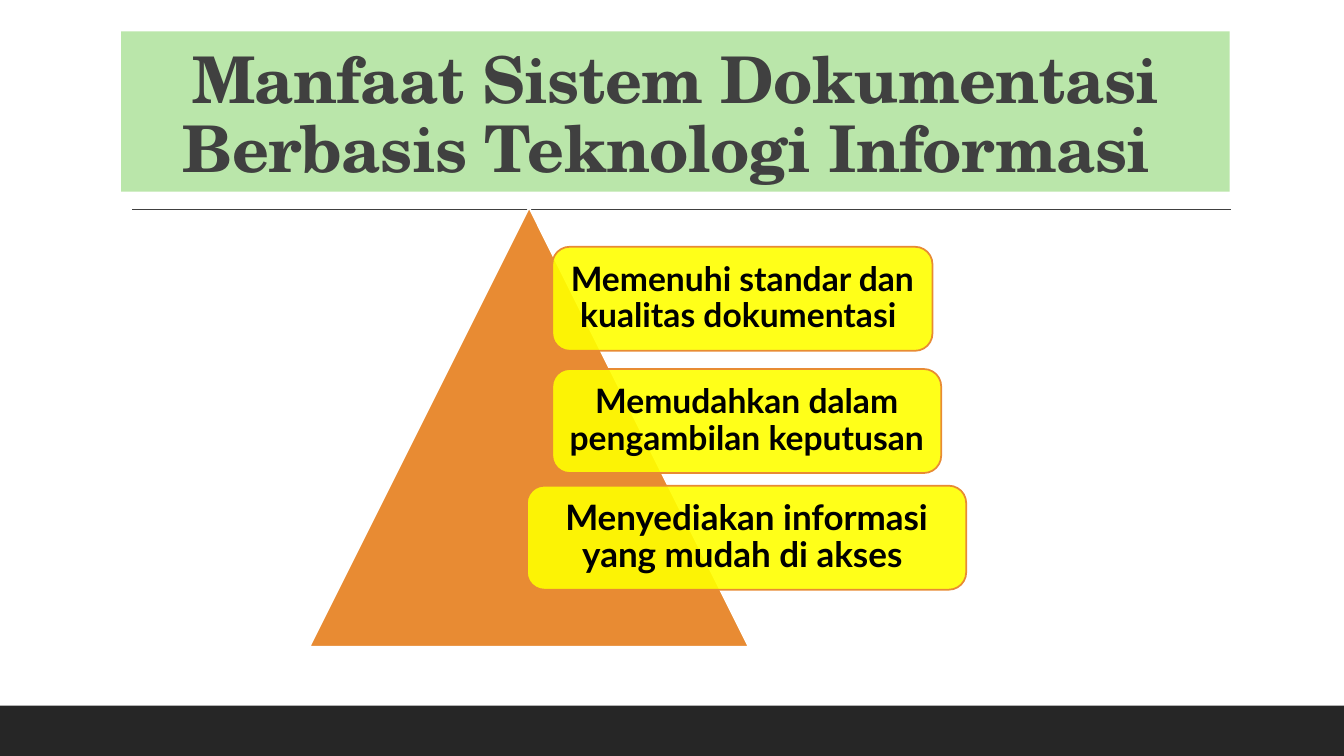
from dataclasses import dataclass

from lxml.etree import SubElement
from pptx import Presentation
from pptx.dml.color import RGBColor
from pptx.enum.shapes import MSO_CONNECTOR, MSO_SHAPE
from pptx.enum.text import MSO_ANCHOR, MSO_AUTO_SIZE, PP_ALIGN
from pptx.oxml.ns import qn
from pptx.util import Cm, Pt


@dataclass(frozen=True)
class Theme:
    title_font: str = "TeX Gyre Schola"
    body_font: str = "Lato"
    title_size: int = 46
    rule_width: float = 1
    outline_width: float = 1.25
    ink: RGBColor = RGBColor(0x40, 0x40, 0x40)
    black: RGBColor = RGBColor(0, 0, 0)
    white: RGBColor = RGBColor(0xFF, 0xFF, 0xFF)
    footer: RGBColor = RGBColor(0x26, 0x26, 0x26)
    title_fill: RGBColor = RGBColor(0xBA, 0xE6, 0xAA)
    orange: RGBColor = RGBColor(0xE8, 0x8B, 0x33)
    yellow: RGBColor = RGBColor(0xFF, 0xFF, 0)


THEME = Theme()
SLIDE_WIDTH, SLIDE_HEIGHT = 33.87, 19.05
FOOTER_HEIGHT = 1.27
BOX_HEIGHT = 2.62

# Text, left, top, width (cm) and type size of each benefit
BENEFITS = [
    ("Memenuhi standar dan kualitas dokumentasi ", 13.92, 6.22, 9.58, 24),
    ("Memudahkan dalam pengambilan keputusan ", 13.92, 9.3, 9.8, 24),
    ("Menyediakan informasi yang mudah di akses ", 13.28, 12.24, 11.07, 25),
]


def write_text(shape, text, font_name, size, color):
    """Write one bold, centred paragraph and return its run."""
    text_frame = shape.text_frame
    text_frame.text = text
    text_frame.word_wrap = True
    text_frame.auto_size = MSO_AUTO_SIZE.NONE
    paragraph = text_frame.paragraphs[0]
    paragraph.alignment = PP_ALIGN.CENTER
    paragraph.line_spacing = 0.9
    run = paragraph.runs[0]
    run.font.name = font_name
    run.font.size = Pt(size)
    run.font.bold = True
    run.font.color.rgb = color
    return run


def add_title(slide, text):
    title = slide.shapes.title
    title.left, title.top = Cm(3.05), Cm(0.79)
    title.width, title.height = Cm(27.94), Cm(4.04)
    title.fill.solid()
    title.fill.fore_color.rgb = THEME.title_fill
    run = write_text(title, text, THEME.title_font, THEME.title_size, THEME.ink)
    title.text_frame.vertical_anchor = MSO_ANCHOR.BOTTOM
    # Slightly tightened letter spacing
    run._r.get_or_add_rPr().set("spc", "-50")


def add_rule(slide, left, right, top):
    rule = slide.shapes.add_connector(
        MSO_CONNECTOR.STRAIGHT, Cm(left), Cm(top), Cm(right), Cm(top))
    rule.line.color.rgb = THEME.ink
    rule.line.width = Pt(THEME.rule_width)
    SubElement(rule._element.spPr, qn("a:effectLst"))


def add_filled_shape(slide, kind, left, top, width, height, fill, outline=None):
    shape = slide.shapes.add_shape(
        kind, Cm(left), Cm(top), Cm(width), Cm(height))
    shape.shadow.inherit = False
    shape.fill.solid()
    shape.fill.fore_color.rgb = fill
    if outline is None:
        shape.line.fill.background()
    else:
        shape.line.color.rgb = outline
        shape.line.width = Pt(THEME.outline_width)
    return shape


def add_benefit(slide, text, left, top, width, size):
    box = add_filled_shape(slide, MSO_SHAPE.ROUNDED_RECTANGLE, left, top, width,
                           BOX_HEIGHT, THEME.yellow, THEME.orange)
    # The pyramid shows faintly through the box
    color = box._element.spPr.find(qn("a:solidFill")).find(qn("a:srgbClr"))
    SubElement(color, qn("a:alpha")).set("val", "90000")
    write_text(box, text, THEME.body_font, size, THEME.black)
    text_frame = box.text_frame
    text_frame.vertical_anchor = MSO_ANCHOR.MIDDLE
    text_frame.margin_left = text_frame.margin_right = Cm(0.25)
    text_frame.margin_top = text_frame.margin_bottom = Cm(0.25)


def main():
    presentation = Presentation()
    presentation.slide_width = Cm(SLIDE_WIDTH)
    presentation.slide_height = Cm(SLIDE_HEIGHT)
    slide = presentation.slides.add_slide(presentation.slide_layouts[5])

    # Frame: footer band, title and rule
    add_filled_shape(slide, MSO_SHAPE.RECTANGLE, 0, SLIDE_HEIGHT - FOOTER_HEIGHT,
                     SLIDE_WIDTH, FOOTER_HEIGHT, THEME.footer)
    add_title(slide, "Manfaat Sistem Dokumentasi Berbasis Teknologi Informasi ")
    add_rule(slide, 3.33, 31.01, 5.28)

    # Pyramid with the benefits in front
    add_filled_shape(slide, MSO_SHAPE.ISOSCELES_TRIANGLE, 7.8, 5.23, 11.07, 11.07,
                     THEME.orange, THEME.white)
    for benefit in BENEFITS:
        add_benefit(slide, *benefit)

    presentation.save("out.pptx")


if __name__ == "__main__":
    main()
